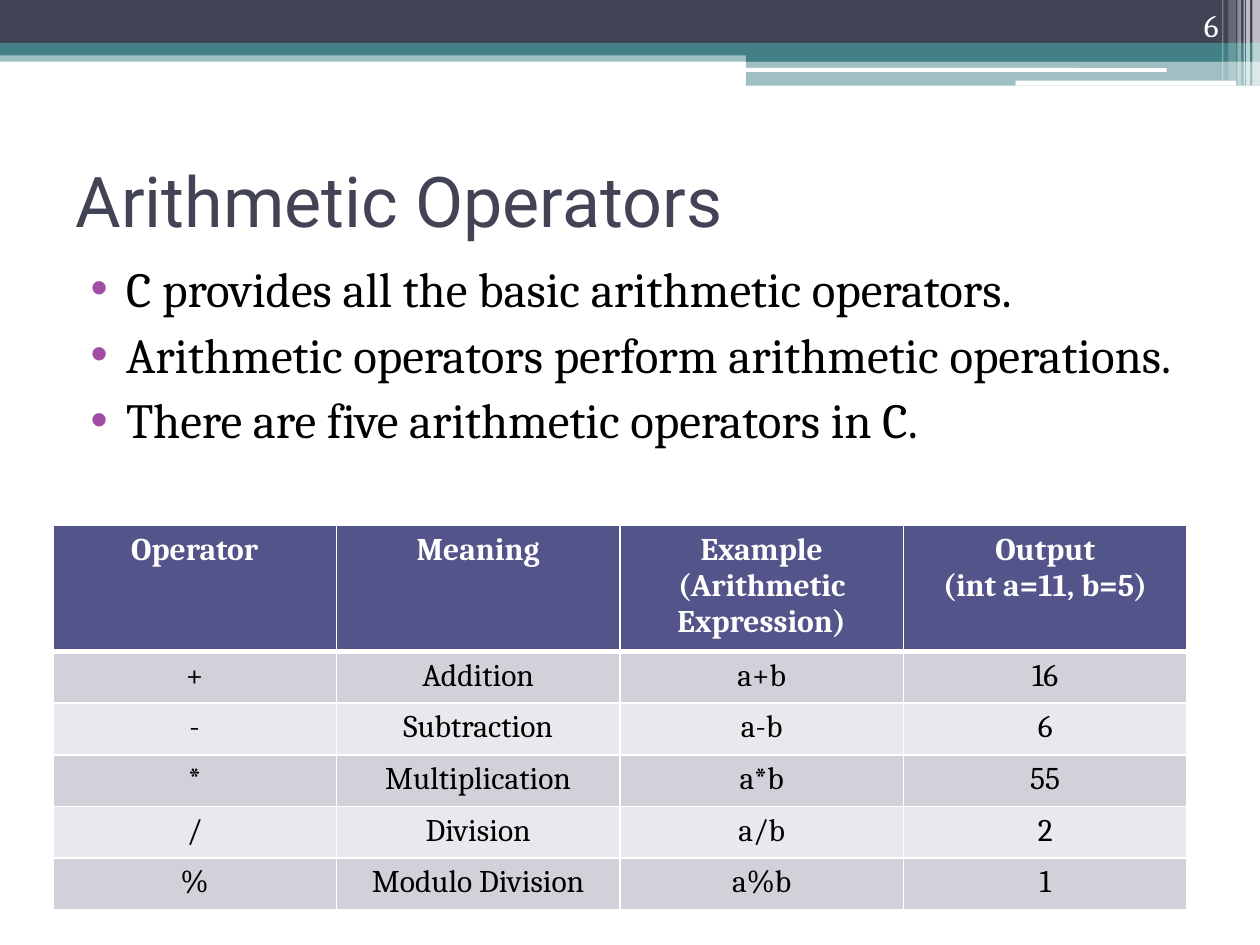
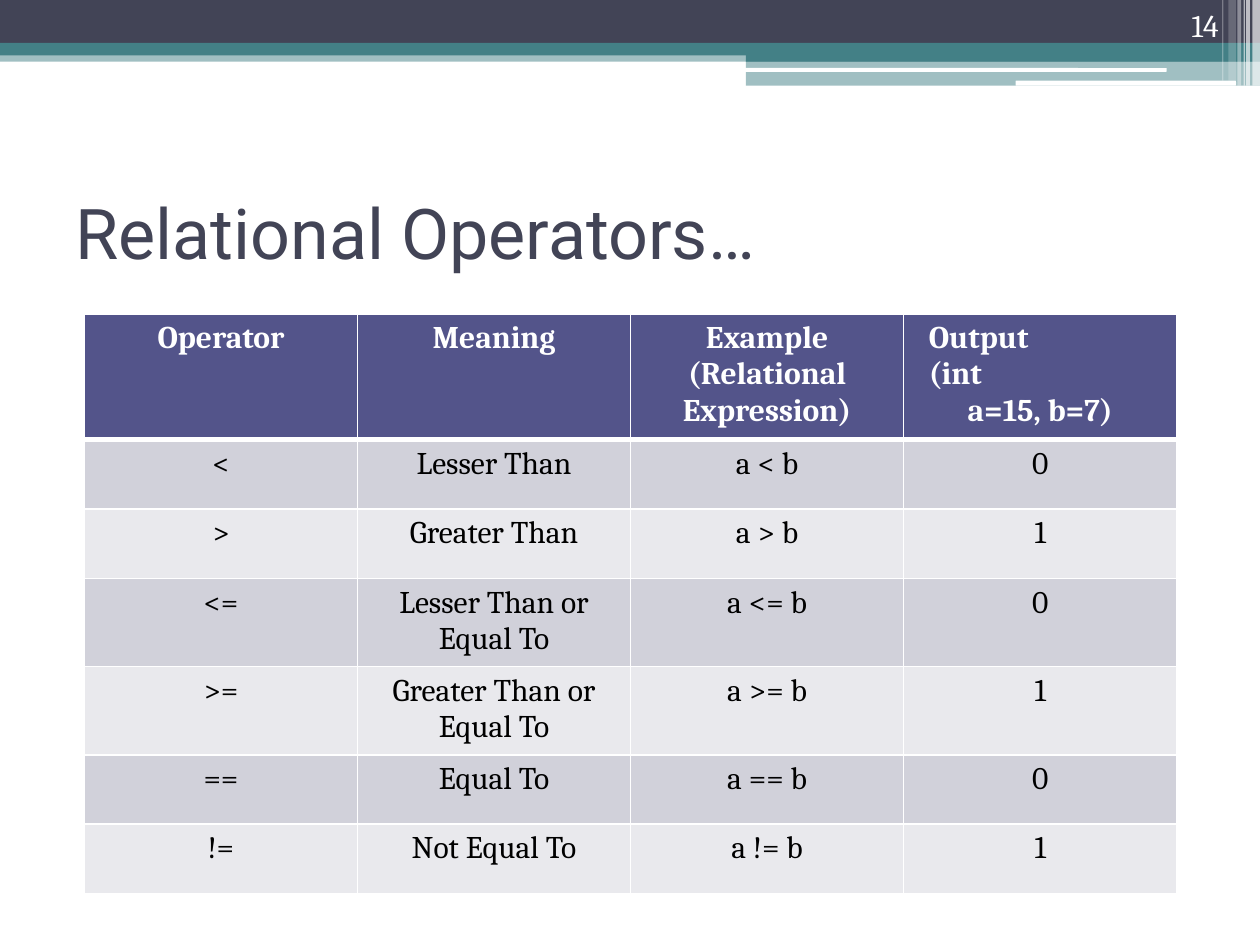
from pptx import Presentation
from pptx.dml.color import RGBColor
from pptx.enum.shapes import MSO_SHAPE as Shape
from pptx.enum.text import MSO_ANCHOR as Anchor, MSO_AUTO_SIZE as Fit, PP_ALIGN as Align
from pptx.oxml.ns import qn
from pptx.util import Inches, Pt
from lxml.etree import SubElement as Sub

WHITE, BLACK = "FFFFFF", "000000"
NAVY, TEAL, PLUM = "424456", "438086", "A04DA3"
HEAD, DARK, PALE = "53548A", "D1D1DA", "E9E9ED"
SERIF, SANS = "Cambria", "Roboto"

# left, top, width, height, colour, opacity in percent
BANDS = [
    (0, 0.4, 10, 0.09, TEAL, 50),
    (0, 0, 10, 0.34, NAVY, 100),
    (0, 0.34, 10, 0.1, TEAL, 100),
    (5.92, 0.39, 4.08, 0.1, TEAL, 100),
    (5.92, 0.48, 4.08, 0.2, TEAL, 50),
]
PILLS = [
    (5.91, 0.54, 3.35, 0.03, WHITE, 100),
    (8.06, 0.64, 1.75, 0.04, WHITE, 100),
]
# left, width, height, opacity in percent
STRIPES = [
    (9.94, 0.06, 0.68, 65),
    (9.89, 0.03, 0.68, 65),
    (9.87, 0.01, 0.68, 60),
    (9.82, 0.03, 0.68, 40),
    (9.75, 0.06, 0.64, 20),
    (9.7, 0.01, 0.64, 30),
]

POINTS = [
    "C provides all the basic arithmetic operators.",
    "Arithmetic operators perform arithmetic operations.",
    "There are five arithmetic operators in C.",
]
ARITH = [
    ("Operator", "Meaning", "Example (Arithmetic Expression)", "Output\n(int a=11, b=5)"),
    ("+", "Addition", "a+b", "16"),
    ("-", "Subtraction", "a-b", "6"),
    ("*", "Multiplication", "a*b", "55"),
    ("/", "Division", "a/b", "2"),
    ("%", "Modulo Division", "a%b", "1"),
]
RELATE = [
    ("Operator", "Meaning", "Example (Relational Expression)", "Output\t(int\na=15, b=7)"),
    ("<", "Lesser Than", "a < b", "0"),
    (">", "Greater Than", "a > b", "1"),
    ("<=", "Lesser Than or Equal To", "a <= b", "0"),
    (">=", "Greater Than or Equal To", "a >= b", "1"),
    ("==", "Equal To", "a == b", "0"),
    ("!=", "Not Equal To", "a != b", "1"),
]


def paint(fill, color, alpha=100):
    fill.solid()
    fill.fore_color.rgb = RGBColor.from_string(color)
    if alpha < 100:
        tint = fill._xPr.find(qn("a:solidFill"))[0]
        Sub(tint, qn("a:alpha"), val=str(alpha * 1000))


def style(para, size, font, color, align, bold=False):
    para.alignment = align
    for run in para.runs:
        run.font.size = Pt(size)
        run.font.name = font
        run.font.bold = bold
        paint(run.font.fill, color)


def place(shape, *box):
    shape.left, shape.top, shape.width, shape.height = map(Inches, box)


def add_bar(slide, kind, left, top, width, height, color, alpha):
    bar = slide.shapes.add_shape(kind, *map(Inches, (left, top, width, height)))
    bar.shadow.inherit = False
    bar.line.fill.background()
    paint(bar.fill, color, alpha)
    return bar


def set_bands(prs, slide):
    """Draw the bands on a slide, then move them to the master all slides share."""
    bars = [add_bar(slide, Shape.RECTANGLE, *band) for band in BANDS]
    bars += [add_bar(slide, Shape.ROUNDED_RECTANGLE, *pill) for pill in PILLS]
    bars += [add_bar(slide, Shape.RECTANGLE, left, 0, width, height, WHITE, alpha)
             for left, width, height, alpha in STRIPES]
    for num, bar in enumerate(bars, 100):
        bar.element.nvSpPr.cNvPr.id = num
        prs.slide_master.shapes.element.append(bar.element)


def set_title(slide, text, top):
    title = slide.shapes.title
    place(title, 0.5, top, 9, 1.17)
    frame = title.text_frame
    frame.text = text
    frame.auto_size = Fit.NONE
    frame.vertical_anchor = Anchor.MIDDLE
    style(frame.paragraphs[0], 40, SANS, NAVY, Align.LEFT)


def set_list(slide, points):
    body = slide.placeholders[1]
    place(body, 0.5, 2, 9, 4.73)
    frame = body.text_frame
    frame.text = "\n".join(points)
    frame.auto_size = Fit.NONE
    for para in frame.paragraphs:
        style(para, 28, SERIF, BLACK, Align.JUSTIFY)
        para.space_before, para.space_after = Pt(3), Pt(1)
        props = para._p.get_or_add_pPr()
        props.set("marL", str(Inches(0.4)))
        props.set("indent", str(Inches(-0.28)))
        Sub(Sub(props, qn("a:buClr")), qn("a:srgbClr"), val=PLUM)
        Sub(props, qn("a:buChar"), char="•")


def add_page(slide, num):
    box = slide.shapes.add_textbox(*map(Inches, (8.94, 0, 0.83, 0.4)))
    frame = box.text_frame
    frame.word_wrap = True
    frame.vertical_anchor = Anchor.BOTTOM
    frame.text = str(num)
    style(frame.paragraphs[0], 18, SERIF, WHITE, Align.RIGHT)


def set_edges(cell, above, below):
    """Give a cell white borders; above and below are widths in points."""
    props = cell._tc.get_or_add_tcPr()
    for side, width in zip("LRTB", (1, 1, above, below)):
        edge = Sub(props, qn("a:ln" + side), w=str(Pt(width)))
        Sub(Sub(edge, qn("a:solidFill")), qn("a:srgbClr"), val=WHITE)


def set_tab(para, start, stop):
    """Start the line at one indent and carry on at a tab stop."""
    para.alignment = Align.LEFT
    props = para._p.get_or_add_pPr()
    props.set("marL", str(Inches(start)))
    tabs = Sub(props, qn("a:tabLst"))
    Sub(tabs, qn("a:tab"), pos=str(Inches(stop)), algn="l")


def fill_cell(cell, text, row):
    head = row == 0
    set_edges(cell, 3 if row == 1 else 1, 3 if head else 1)
    paint(cell.fill, HEAD if head else DARK if row % 2 else PALE)
    cell.text_frame.text = text
    for para in cell.text_frame.paragraphs:
        style(para, 18, SERIF, WHITE if head else BLACK, Align.CENTER, head)
        if "\t" in para.text:
            set_tab(para, 0.1, 1.45)


def add_grid(slide, rows, left, top, width, step):
    count = len(rows[0])
    tall = 0.96 + step * (len(rows) - 1)
    box = map(Inches, (left, top, width, tall))
    table = slide.shapes.add_table(len(rows), count, *box).table
    for col in table.columns:
        col.width = Inches(width / count)
    for i, row in enumerate(rows):
        table.rows[i].height = Inches(step if i else 0.96)
        for j, text in enumerate(row):
            fill_cell(table.cell(i, j), text, i)


def main():
    prs = Presentation()
    prs.slide_width, prs.slide_height = Inches(10), Inches(7.5)

    arith = prs.slides.add_slide(prs.slide_layouts[1])
    set_bands(prs, arith)
    set_title(arith, "Arithmetic Operators", 1)
    set_list(arith, POINTS)
    add_page(arith, 6)
    add_grid(arith, ARITH, 0.42, 4.17, 9, 0.41)

    relate = prs.slides.add_slide(prs.slide_layouts[5])
    set_title(relate, "Relational Operators…", 1.25)
    add_page(relate, 14)
    add_grid(relate, RELATE, 0.67, 2.49, 8.67, 0.55)

    prs.save("out.pptx")


if __name__ == "__main__":
    main()
